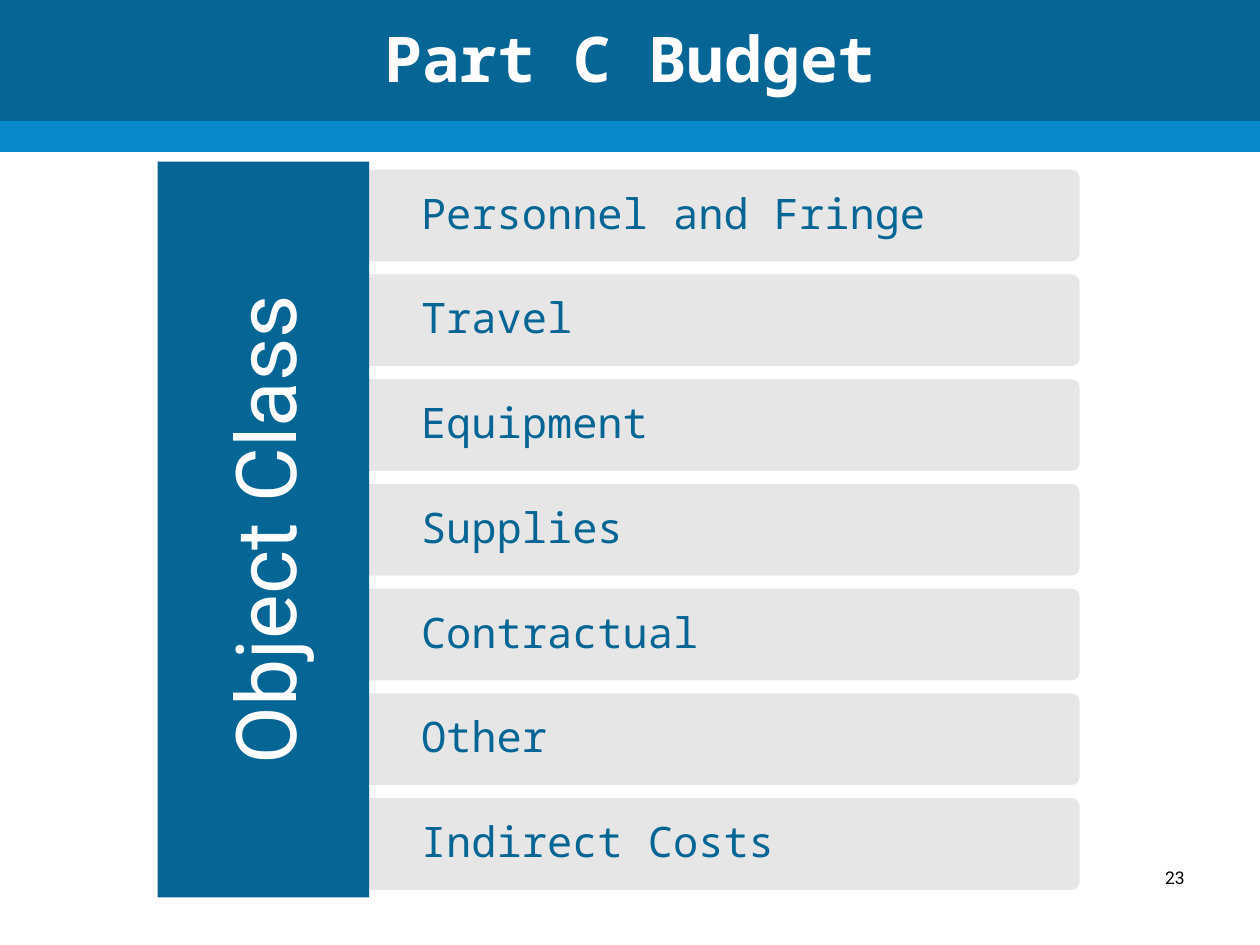
from pptx import Presentation
from pptx.dml.color import RGBColor
from pptx.enum.shapes import MSO_CONNECTOR, MSO_SHAPE
from pptx.enum.text import MSO_ANCHOR, PP_ALIGN
from pptx.oxml.ns import qn
from pptx.util import Pt
from lxml.etree import SubElement

HUES = {"blue": "056594", "sky": "078ACB", "gray": "E6E6E6",
        "white": "FFFFFF", "black": "000000"}
MONO, SANS = "Noto Sans Mono", "Roboto"
LEFT, MID, RIGHT = PP_ALIGN.LEFT, PP_ALIGN.CENTER, PP_ALIGN.RIGHT


def hue(name):
    return RGBColor.from_string(HUES[name])


def write(frame, text, size=24, font=MONO, color="blue", bold=False,
          align=LEFT, anchor=MSO_ANCHOR.MIDDLE, inset=None, indent=0,
          space=1.0, turn=None):
    frame.word_wrap = True
    frame.vertical_anchor = anchor
    if inset is not None:
        frame.margin_left = frame.margin_right = Pt(inset)
        frame.margin_top = frame.margin_bottom = Pt(inset)
    if turn:
        frame._txBody.bodyPr.set("vert", turn)
    para = frame.paragraphs[0]
    para.alignment = align
    para.line_spacing = space
    if indent:
        para._p.get_or_add_pPr().set("marL", str(Pt(indent)))
    run = para.add_run()
    run.text = text
    run.font.size = Pt(size)
    run.font.name = font
    run.font.bold = bold
    run.font.color.rgb = hue(color)


class Page:
    def __init__(self, deck):
        self.slide = deck.slides.add_slide(deck.slide_layouts[6])
        self.shapes = self.slide.shapes

    def block(self, x, y, w, h, fill, kind=MSO_SHAPE.RECTANGLE,
              edge=None, round=None):
        shape = self.shapes.add_shape(kind, Pt(x), Pt(y), Pt(w), Pt(h))
        shape.shadow.inherit = False
        shape.fill.solid()
        shape.fill.fore_color.rgb = hue(fill)
        if edge:
            shape.line.color.rgb = hue(edge)
            shape.line.width = Pt(2)
        else:
            shape.line.fill.background()
        if round is not None:
            shape.adjustments[0] = round
        return shape

    def rule(self, x1, y1, x2, y2, color, width):
        line = self.shapes.add_connector(
            MSO_CONNECTOR.STRAIGHT, Pt(x1), Pt(y1), Pt(x2), Pt(y2))
        line.line.color.rgb = hue(color)
        line.line.width = Pt(width)
        SubElement(line._element.spPr, qn("a:effectLst"))

    def label(self, x, y, w, h, text, **style):
        box = self.shapes.add_textbox(Pt(x), Pt(y), Pt(w), Pt(h))
        write(box.text_frame, text, **style)


def main():
    deck = Presentation()
    deck.slide_width, deck.slide_height = Pt(720), Pt(540)
    page = Page(deck)

    # Header band and title
    page.block(0, 0, 720, 72, "blue")
    page.rule(0, 78, 720, 78, "sky", 18)
    page.label(0, 0, 720, 66, "Part C Budget", size=36, color="white",
               bold=True, align=MID)

    # Budget rows
    rows = ["Personnel and Fringe", "Travel", "Equipment", "Supplies",
            "Contractual", "Other", "Indirect Costs"]
    top, step, high = 95.9, 59.85, 54.5
    for i, name in enumerate(rows):
        y = top + i * step
        page.block(102, y, 516, high, "gray", MSO_SHAPE.ROUNDED_RECTANGLE,
                   edge="white", round=0.1)
        page.label(211, y, 407.5, high, name, inset=7.2, indent=22.5,
                   space=0.9)

    # Side block with turned text
    side = page.block(90, 92.4, 121, 420.5, "blue")
    write(side.text_frame, "Object Class", size=48, font=SANS,
          color="white", align=MID, turn="vert270")

    # Page number
    page.label(534, 492, 150, 36, "23", size=10, font=SANS, color="black",
               align=RIGHT, anchor=MSO_ANCHOR.TOP)

    deck.save("out.pptx")


if __name__ == "__main__":
    main()
